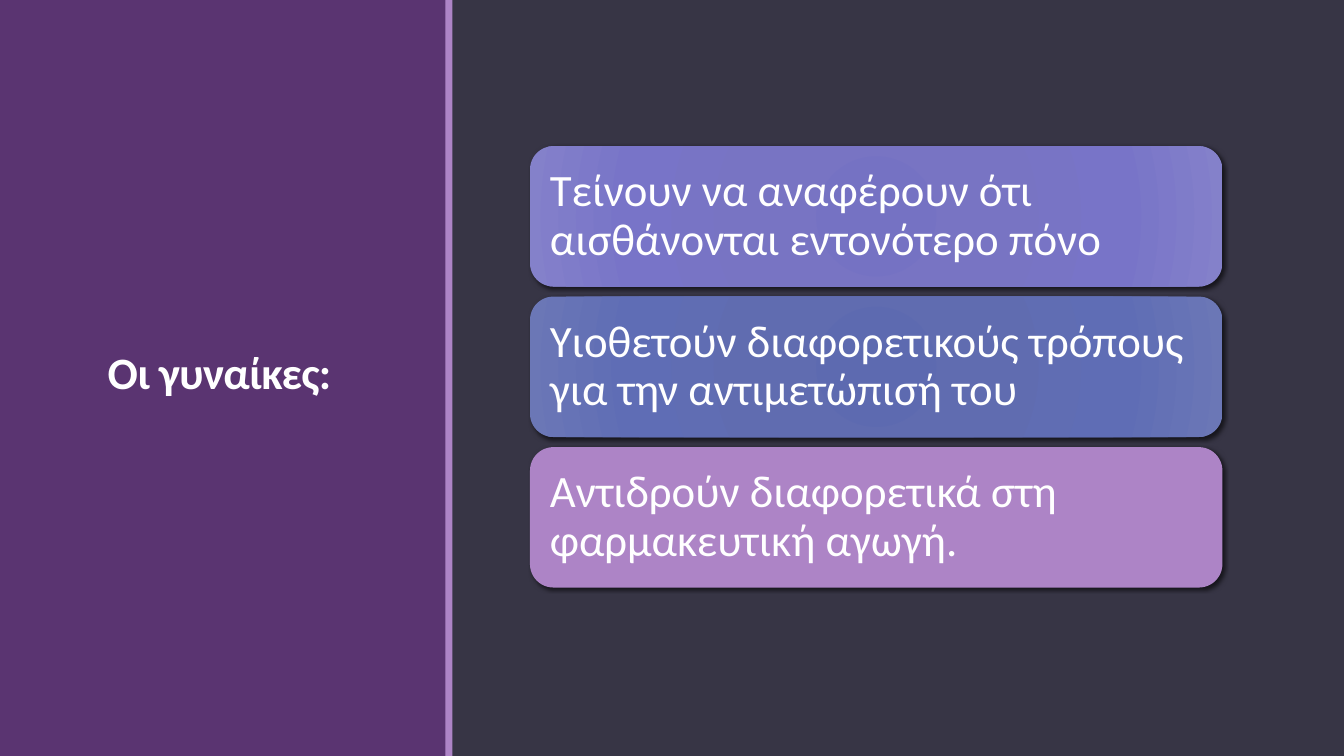
from dataclasses import dataclass

from lxml import etree
from pptx import Presentation
from pptx import util as u
from pptx.dml.color import RGBColor
from pptx.enum import shapes, text
from pptx.oxml import ns

COLOURS = {
    "backdrop": "373545",
    "panel": "5A3471",
    "accent": "AD84C6",
    "text": "FFFFFF",
    "shadow": "000000",
}
FONT = "Calibri"
TEXT_SIZE = 32
PAGE_WIDTH, PAGE_HEIGHT = 960, 540
CARD_LEFT, CARD_TOP, CARD_WIDTH, CARD_HEIGHT = 378.6, 104.4, 494.6, 100.3
CARD_STEP = 107.5
CARD_INSET = 9.36
GRADIENT_POSITIONS = (0, 34, 70, 100)


@dataclass(frozen=True)
class Bar:
    """A plain full-height bar."""

    left: float
    width: float
    colour: str


@dataclass(frozen=True)
class Card:
    """A rounded card with one colour, or four from its centre outwards."""

    wording: str
    colours: tuple[str, ...]


BARS = (
    Bar(0, 319, COLOURS["panel"]),
    Bar(318.2, 5, COLOURS["accent"]),
)
CARDS = (
    Card("Τείνουν να αναφέρουν ότι αισθάνονται εντονότερο πόνο",
         ("7572C3", "7874C3", "7874C8", "8481CA")),
    Card("Υιοθετούν διαφορετικούς τρόπους για την αντιμετώπισή του",
         ("5D6AB0", "606CB0", "5F6DB5", "6B77B6")),
    Card("Αντιδρούν διαφορετικά στη φαρμακευτική αγωγή.", (COLOURS["accent"],)),
)


def add_node(parent, tag: str, **attributes):
    """Append a DrawingML element and return it."""
    values = {name: str(value) for name, value in attributes.items()}
    return etree.SubElement(parent, ns.qn(f"a:{tag}"), values)


def add_span(para, wording: str, bold: bool = False):
    """Add one formatted run to a paragraph."""
    span = para.add_run()
    span.text = wording
    span.font.name = FONT
    span.font.size = u.Pt(TEXT_SIZE)
    span.font.bold = bold
    span.font.color.rgb = RGBColor.from_string(COLOURS["text"])
    return span


def paint_solid(box, colour: str) -> None:
    """Fill a shape with one colour and take away its outline."""
    box.fill.solid()
    box.fill.fore_color.rgb = RGBColor.from_string(colour)
    box.line.fill.background()


def paint_radial(box, colours: tuple[str, ...]) -> None:
    """Replace a solid fill by a gradient spreading from the centre."""
    properties = box.element.spPr
    gradient = etree.Element(ns.qn("a:gradFill"), rotWithShape="1")
    stops = add_node(gradient, "gsLst")
    for position, colour in zip(GRADIENT_POSITIONS, colours):
        stop = add_node(stops, "gs", pos=position * 1000)
        add_node(stop, "srgbClr", val=colour)
    spread = add_node(gradient, "path", path="circle")
    add_node(spread, "fillToRect", l=50000, t=50000, r=50000, b=50000)
    properties.replace(properties.find(ns.qn("a:solidFill")), gradient)


def cast_shadow(box) -> None:
    """Give a shape a soft shadow to the lower right."""
    effects = box.element.spPr.find(ns.qn("a:effectLst"))
    shadow = add_node(effects, "outerShdw", blurRad=u.Pt(3), dist=u.Pt(2),
                      dir=45 * 60000, algn="ctr", rotWithShape=0)
    colour = add_node(shadow, "srgbClr", val=COLOURS["shadow"])
    add_node(colour, "alpha", val=60000)


def draw_bar(page, bar: Bar) -> None:
    """Draw one full-height bar."""
    box = page.shapes.add_shape(shapes.MSO_SHAPE.RECTANGLE, u.Pt(bar.left), u.Pt(0),
                                u.Pt(bar.width), u.Pt(PAGE_HEIGHT))
    box.shadow.inherit = False
    paint_solid(box, bar.colour)


def draw_card(page, card: Card, top: float) -> None:
    """Draw one card with its text."""
    box = page.shapes.add_shape(shapes.MSO_SHAPE.ROUNDED_RECTANGLE, u.Pt(CARD_LEFT),
                                u.Pt(top), u.Pt(CARD_WIDTH), u.Pt(CARD_HEIGHT))
    box.shadow.inherit = False
    paint_solid(box, card.colours[0])
    if len(card.colours) > 1:
        paint_radial(box, card.colours)
    cast_shadow(box)
    frame = box.text_frame
    frame.word_wrap = True
    frame.vertical_anchor = text.MSO_ANCHOR.MIDDLE
    frame.margin_left = frame.margin_right = u.Pt(CARD_INSET)
    frame.margin_top = frame.margin_bottom = u.Pt(CARD_INSET)
    para = frame.paragraphs[0]
    para.alignment = text.PP_ALIGN.LEFT
    para.line_spacing = 0.9
    add_span(para, card.wording)


def place_title(page, wording: str) -> None:
    """Move the title placeholder onto the panel and fill it."""
    title = page.shapes.title
    title.left, title.top = u.Pt(38.9), u.Pt(41)
    title.width, title.height = u.Pt(242.6), u.Pt(454.3)
    frame = title.text_frame
    frame.word_wrap = True
    frame.auto_size = text.MSO_AUTO_SIZE.NONE
    frame.vertical_anchor = text.MSO_ANCHOR.MIDDLE
    para = frame.paragraphs[0]
    para.alignment = text.PP_ALIGN.CENTER
    para.line_spacing = 0.85
    span = add_span(para, wording, bold=True)
    span.font._element.set("spc", "-50")
    title.element.getparent().append(title.element)


def main() -> None:
    """Build the slide and save it."""
    deck = Presentation()
    deck.slide_width, deck.slide_height = u.Pt(PAGE_WIDTH), u.Pt(PAGE_HEIGHT)
    page = deck.slides.add_slide(deck.slide_layouts.get_by_name("Title Only"))
    page.background.fill.solid()
    page.background.fill.fore_color.rgb = RGBColor.from_string(COLOURS["backdrop"])
    for bar in BARS:
        draw_bar(page, bar)
    place_title(page, "Οι γυναίκες: ")
    for index, card in enumerate(CARDS):
        draw_card(page, card, CARD_TOP + index * CARD_STEP)
    deck.save("out.pptx")


if __name__ == "__main__":
    main()
